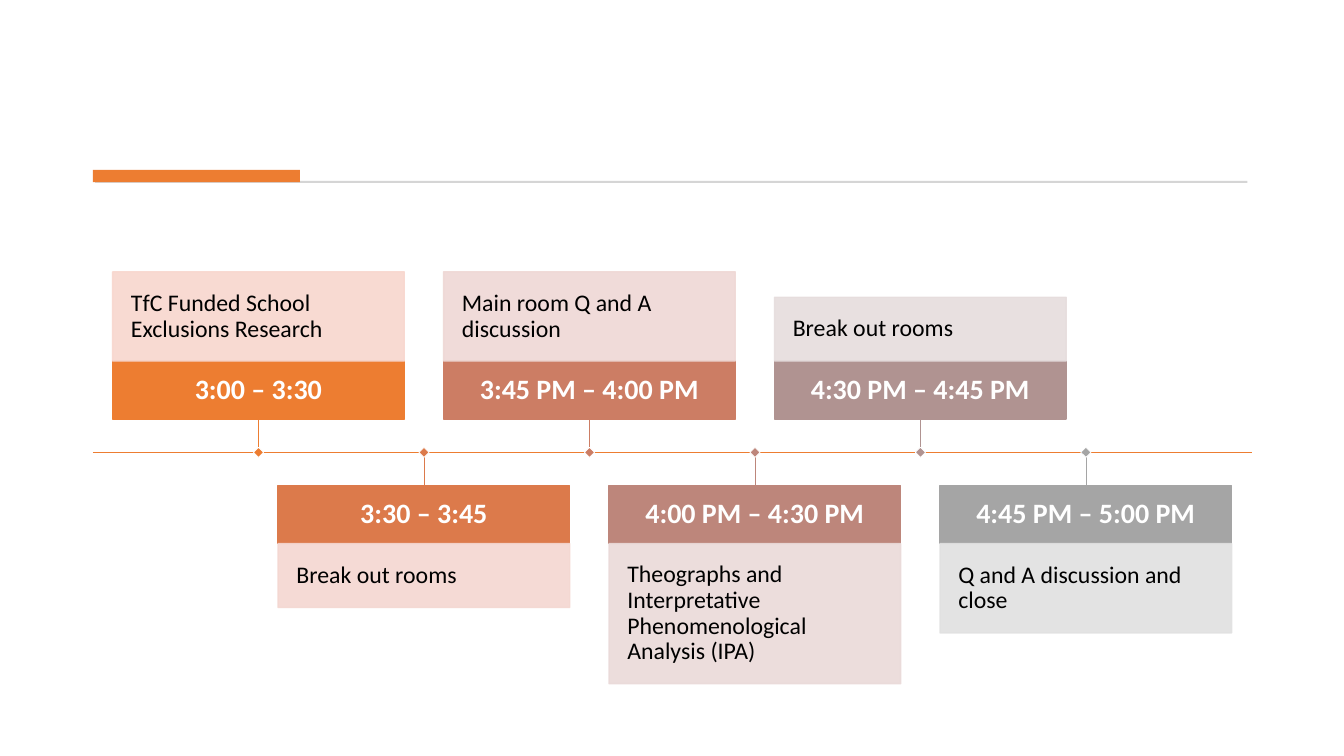
from dataclasses import dataclass

from lxml.etree import SubElement
from pptx import Presentation
from pptx.dml.color import RGBColor
from pptx.enum.shapes import MSO_CONNECTOR as CONN, MSO_SHAPE as SHAPE
from pptx.enum.text import MSO_ANCHOR as ANCHOR, PP_ALIGN as ALIGN
from pptx.oxml.ns import qn
from pptx.shapes.autoshape import Shape
from pptx.slide import Slide
from pptx.util import Cm, Pt

ORANGE, WHITE, BLACK = "ED7D31", "FFFFFF", "000000"
FONT = "Calibri"

AXIS_LEFT, AXIS_RIGHT, AXIS_Y = 2.34, 31.55, 11.4
FIRST_LEFT, STEP = 2.84, 4.17
CARD_W, TIME_H, STEM = 7.35, 1.46, 0.84
NOTE_PAD, NOTE_LINE = 0.97, 0.64
MARKER = 0.18


@dataclass(frozen=True)
class Session:
    time: str
    topic: str
    lines: int
    color: str
    tint: str


SESSIONS = [
    Session("3:00 – 3:30", "TfC Funded School Exclusions Research", 2, ORANGE, "F8D7CE"),
    Session("3:30 – 3:45", "Break out rooms", 1, "DC7A4B", "F4D7D1"),
    Session("3:45 PM – 4:00 PM", "Main room Q and A discussion", 2, "CC7D64", "EFD8D5"),
    Session("4:00 PM – 4:30 PM",
            "Theographs and Interpretative Phenomenological Analysis (IPA)",
            4, "BD867B", "EADAD9"),
    Session("4:30 PM – 4:45 PM", "Break out rooms", 1, "B09391", "E6DDDD"),
    Session("4:45 PM – 5:00 PM", "Q and A discussion and close", 2, "A5A5A5", "E1E1E1"),
]


def rgb(color: str) -> RGBColor:
    return RGBColor.from_string(color)


def add_box(s: Slide, x: float, y: float, w: float, h: float, fill: str,
            line: str | None = None, weight: float = 1) -> Shape:
    sp = s.shapes.add_shape(SHAPE.RECTANGLE, Cm(x), Cm(y), Cm(w), Cm(h))
    sp.shadow.inherit = False
    sp.fill.solid()
    sp.fill.fore_color.rgb = rgb(fill)
    if line:
        sp.line.color.rgb = rgb(line)
        sp.line.width = Pt(weight)
    else:
        sp.line.fill.background()
    return sp


def add_line(s: Slide, x1: float, y1: float, x2: float, y2: float,
             color: str, weight: float) -> None:
    line = s.shapes.add_connector(CONN.STRAIGHT, Cm(x1), Cm(y1), Cm(x2), Cm(y2))
    line.line.color.rgb = rgb(color)
    line.line.width = Pt(weight)
    SubElement(line._element.spPr, qn("a:effectLst"))


def set_alpha(sp: Shape, percent: int) -> None:
    """Give the fill and the outline the same opacity."""
    for clr in list(sp._element.spPr.iter(qn("a:srgbClr"))):
        SubElement(clr, qn("a:alpha"), val=str(percent * 1000))


def write(sp: Shape, text: str, size: float, color: str, inset: float,
          align: ALIGN, bold: bool = False) -> None:
    tf = sp.text_frame
    tf.word_wrap = True
    tf.vertical_anchor = ANCHOR.MIDDLE
    tf.margin_left = tf.margin_right = tf.margin_top = tf.margin_bottom = Cm(inset)
    p = tf.paragraphs[0]
    p.alignment = align
    p.line_spacing = 0.9
    r = p.add_run()
    r.text = text
    r.font.name = FONT
    r.font.size = Pt(size)
    r.font.bold = bold
    r.font.color.rgb = rgb(color)


def add_session(s: Slide, index: int, item: Session) -> None:
    """Draw one card, above the axis for even indexes and below for odd ones."""
    above = index % 2 == 0
    x = FIRST_LEFT + index * STEP
    center = x + CARD_W / 2
    note_h = NOTE_PAD + NOTE_LINE * item.lines
    if above:
        stem_end = AXIS_Y - STEM
        time_y = stem_end - TIME_H
        note_y = time_y - note_h
    else:
        stem_end = time_y = AXIS_Y + STEM
        note_y = time_y + TIME_H

    time_box = add_box(s, x, time_y, CARD_W, TIME_H, item.color, item.color)
    write(time_box, item.time, 20, WHITE, 0.28, ALIGN.CENTER, bold=True)
    note = add_box(s, x, note_y, CARD_W, note_h, item.tint, item.tint)
    set_alpha(note, 90)
    write(note, item.topic, 17, BLACK, 0.46, ALIGN.LEFT)

    add_line(s, center, stem_end, center, AXIS_Y, item.color, 0.5)
    marker = add_box(s, center - MARKER / 2, AXIS_Y - MARKER / 2, MARKER, MARKER,
                     item.color, WHITE, 0.5)
    marker.rotation = 45


def main() -> None:
    prs = Presentation()
    prs.slide_width, prs.slide_height = Cm(33.87), Cm(19.05)
    s = prs.slides.add_slide(prs.slide_layouts[6])

    add_box(s, 2.4, 4.56, 29.04, 0.05, "D5D5D5")
    add_box(s, 2.34, 4.28, 5.22, 0.31, ORANGE)
    add_line(s, AXIS_LEFT, AXIS_Y, AXIS_RIGHT, AXIS_Y, ORANGE, 1)
    for index, item in enumerate(SESSIONS):
        add_session(s, index, item)

    prs.save("out.pptx")


if __name__ == "__main__":
    main()
